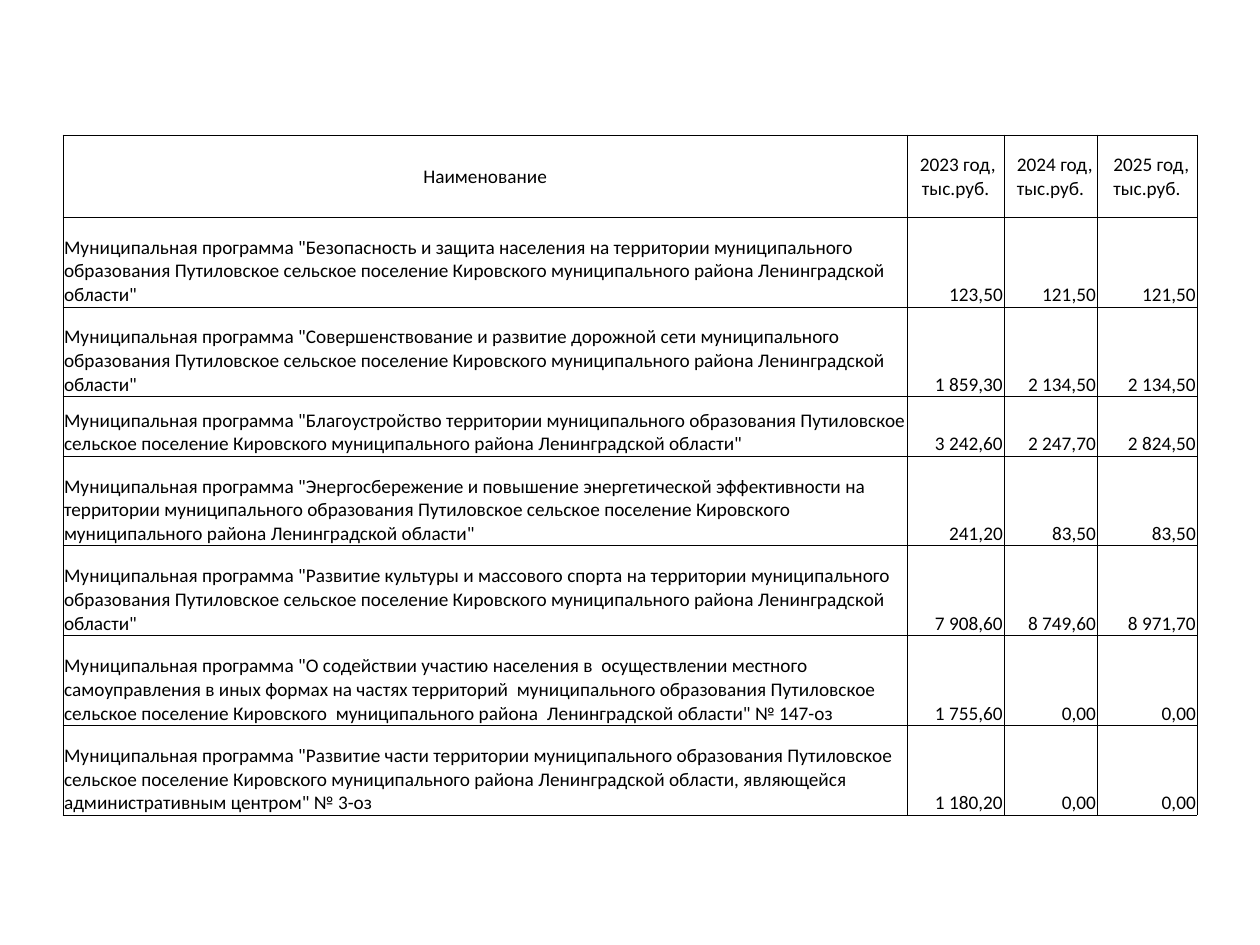
from pptx import Presentation
from pptx.dml.color import RGBColor
from pptx.enum.text import MSO_ANCHOR as Anchor, PP_ALIGN as Align
from pptx.oxml import parse_xml
from pptx.oxml.ns import nsdecls
from pptx.util import Pt

BLACK = RGBColor(0x00, 0x00, 0x00)
FONT = "Calibri"
COLUMN_WIDTHS = (482.5, 55.2, 53.2, 57.1)
HEADER_HEIGHT, TALL_HEIGHT, SHORT_HEIGHT = 47, 51.3, 34
HEADINGS = (
    ("Наименование", 0),
    ("2023 год, тыс.руб.", 2.5),
    ("2024 год, тыс.руб.", 5),
    ("2025 год, тыс.руб.", 5),
)
PREFIX = "Муниципальная программа "
PLACE = (
    "муниципального образования Путиловское сельское поселение "
    "Кировского муниципального района Ленинградской области"
)
PROGRAMS = (
    (f'"Безопасность и защита населения на территории {PLACE}"',
     ("123,50", "121,50", "121,50"), TALL_HEIGHT),
    (f'"Совершенствование и развитие дорожной сети {PLACE}"',
     ("1 859,30", "2 134,50", "2 134,50"), TALL_HEIGHT),
    (f'"Благоустройство территории {PLACE}"',
     ("3 242,60", "2 247,70", "2 824,50"), SHORT_HEIGHT),
    (f'"Энергосбережение и повышение энергетической эффективности на территории {PLACE}"',
     ("241,20", "83,50", "83,50"), TALL_HEIGHT),
    (f'"Развитие культуры и массового спорта на территории {PLACE}"',
     ("7 908,60", "8 749,60", "8 971,70"), TALL_HEIGHT),
    ('"О содействии участию населения в  осуществлении местного самоуправления '
     "в иных формах на частях территорий  муниципального образования Путиловское "
     "сельское поселение Кировского  муниципального района  "
     'Ленинградской области" № 147-оз',
     ("1 755,60", "0,00", "0,00"), TALL_HEIGHT),
    (f'"Развитие части территории {PLACE}, являющейся административным центром" № 3-оз',
     ("1 180,20", "0,00", "0,00"), TALL_HEIGHT),
)


def write_text(cell, text, *, align=Align.LEFT, anchor=Anchor.BOTTOM, size=11, indent=0):
    cell.vertical_anchor = anchor
    cell.margin_left = cell.margin_right = cell.margin_top = Pt(0.6)
    cell.margin_bottom = 0
    paragraph = cell.text_frame.paragraphs[0]
    paragraph.alignment = align
    if indent:
        paragraph_properties = paragraph._p.get_or_add_pPr()
        paragraph_properties.set("marL", "0")
        paragraph_properties.set("indent", str(Pt(indent)))
    run = paragraph.add_run()
    run.text = text
    run.font.name = FONT
    run.font.size = Pt(size)
    run.font.color.rgb = BLACK


def style_cell(cell):
    cell.fill.background()
    cell_properties = cell._tc.get_or_add_tcPr()
    for position, side in enumerate(("lnL", "lnR", "lnT", "lnB")):
        border = parse_xml(
            f'<a:{side} {nsdecls("a")} w="{Pt(0.5)}"><a:solidFill>'
            f'<a:srgbClr val="{BLACK}"/></a:solidFill></a:{side}>'
        )
        cell_properties.insert(position, border)


def add_budget_table(slide, left, top, width, height):
    frame = slide.shapes.add_table(
        len(PROGRAMS) + 1, len(HEADINGS), Pt(left), Pt(top), Pt(width), Pt(height)
    )
    table = frame.table
    table.first_row = table.horz_banding = False
    for column, share in zip(table.columns, COLUMN_WIDTHS):
        column.width = Pt(width * share / sum(COLUMN_WIDTHS))
    row_heights = [HEADER_HEIGHT] + [program[2] for program in PROGRAMS]
    for row, share in zip(table.rows, row_heights):
        row.height = Pt(height * share / sum(row_heights))
    for index, (heading, indent) in enumerate(HEADINGS):
        write_text(table.cell(0, index), heading, align=Align.CENTER,
                   anchor=Anchor.MIDDLE, indent=indent)
    for row_index, (name, amounts, _) in enumerate(PROGRAMS, 1):
        write_text(table.cell(row_index, 0), PREFIX + name)
        for column_index, amount in enumerate(amounts, 1):
            write_text(table.cell(row_index, column_index), amount, align=Align.RIGHT)
    for cell in table.iter_cells():
        style_cell(cell)


def main():
    presentation = Presentation()
    presentation.slide_width = Pt(720)
    presentation.slide_height = Pt(540)
    slide = presentation.slides.add_slide(presentation.slide_layouts[6])
    add_budget_table(slide, 36, 77.1, 648, 388.8)
    presentation.save("out.pptx")


if __name__ == "__main__":
    main()
